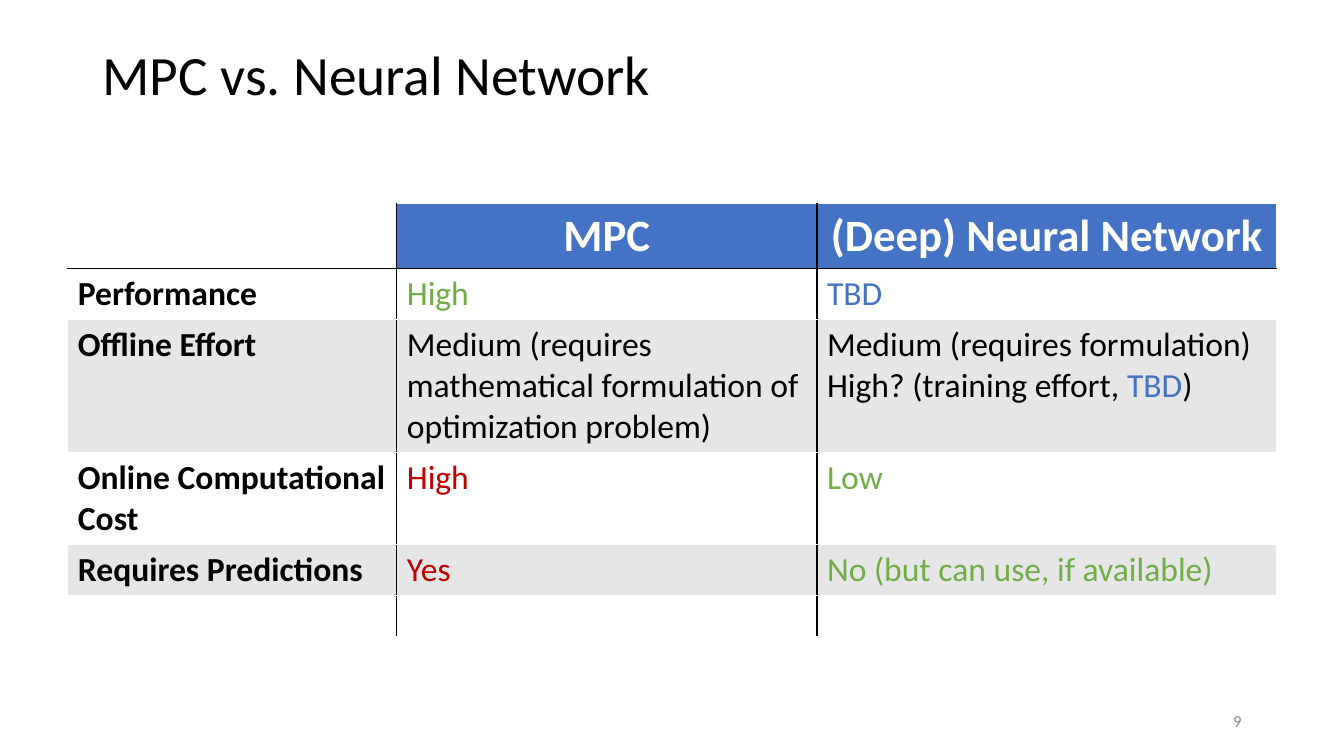
from lxml import etree
from pptx import Presentation
from pptx import util as u
from pptx.dml import color
from pptx.enum import text
from pptx.oxml import ns

COLORS = {
    "black": "000000", "white": "FFFFFF", "blue": "4472C4", "green": "70AD47",
    "red": "C00000", "band": "E7E6E6", "gray": "8C8C8C",
}
FONT = "Calibri"

# A cell is a list of paragraphs; a paragraph is a list of (words, color) runs
HEADINGS = ["", "MPC", "(Deep) Neural Network"]
CRITERIA = [
    ("Performance", [[("High", "green")]], [[("TBD", "blue")]]),
    ("Offline Effort",
     [[("Medium (requires mathematical formulation of optimization problem)", "black")]],
     [[("Medium (requires formulation)", "black")],
      [("High? (training effort, ", "black"), ("TBD", "blue"), (")", "black")]]),
    ("Online Computational Cost", [[("High", "red")]], [[("Low", "green")]]),
    ("Requires Predictions", [[("Yes", "red")]],
     [[("No (but can use, if available)", "green")]]),
    ("", [], []),
]
COLUMN_WIDTHS = [8.29, 10.59, 11.59]
ROW_HEIGHTS = [1.63, 1.29, 3.35, 2.32, 1.29, 1.03]


def rgb(name):
    return color.RGBColor.from_string(COLORS[name])


def write(frame, paragraphs, size, bold=False, align=text.PP_ALIGN.LEFT, spacing=None):
    for index, runs in enumerate(paragraphs):
        paragraph = frame.add_paragraph() if index else frame.paragraphs[0]
        paragraph.alignment = align
        if spacing:
            paragraph.line_spacing = spacing
        for words, tone in runs:
            run = paragraph.add_run()
            run.text = words
            run.font.name = FONT
            run.font.size = u.Pt(size)
            run.font.bold = bold
            run.font.color.rgb = rgb(tone)


def add_label(slide, left, top, width, height, words, tone, size, **style):
    label = slide.shapes.add_textbox(u.Cm(left), u.Cm(top), u.Cm(width), u.Cm(height))
    label.text_frame.word_wrap = True
    label.text_frame.vertical_anchor = text.MSO_ANCHOR.MIDDLE
    write(label.text_frame, [[(words, tone)]], size, **style)


def set_borders(cell, **sides):
    properties = cell._tc.get_or_add_tcPr()
    for side in "LRTB":
        line = etree.SubElement(properties, ns.qn(f"a:ln{side}"), w=str(u.Pt(1)))
        fill = etree.SubElement(line, ns.qn("a:solidFill"))
        etree.SubElement(fill, ns.qn("a:srgbClr"), val=COLORS[sides[side]])


def style_cell(cell, row, column):
    last = len(COLUMN_WIDTHS) - 1
    set_borders(
        cell,
        L="black" if column > 0 else "white",
        R="black" if column < last else "white",
        T="black" if row == 1 else "white",
        B="black" if row == 0 else "white",
    )
    if row == 0 and column > 0:
        background = "blue"
    else:
        background = "band" if row in (2, 4) else "white"
    cell.fill.solid()
    cell.fill.fore_color.rgb = rgb(background)


def add_comparison(slide, left, top):
    comparison = slide.shapes.add_table(
        len(ROW_HEIGHTS), len(COLUMN_WIDTHS), u.Cm(left), u.Cm(top),
        u.Cm(sum(COLUMN_WIDTHS)), u.Cm(sum(ROW_HEIGHTS))).table
    for column, width in zip(comparison.columns, COLUMN_WIDTHS):
        column.width = u.Cm(width)
    for row, height in enumerate(ROW_HEIGHTS):
        comparison.rows[row].height = u.Cm(height)
        for column in range(len(COLUMN_WIDTHS)):
            style_cell(comparison.cell(row, column), row, column)

    # Heading row
    for column, heading in enumerate(HEADINGS):
        if heading:
            write(comparison.cell(0, column).text_frame, [[(heading, "white")]], 32,
                  bold=True, align=text.PP_ALIGN.CENTER)

    # One row per criterion
    for row, (criterion, *ratings) in enumerate(CRITERIA, start=1):
        if criterion:
            write(comparison.cell(row, 0).text_frame, [[(criterion, "black")]], 24, bold=True)
        for column, rating in enumerate(ratings, start=1):
            write(comparison.cell(row, column).text_frame, rating, 24)


def main():
    deck = Presentation()
    deck.slide_width, deck.slide_height = u.Cm(33.87), u.Cm(19.05)
    slide = deck.slides.add_slide(deck.slide_layouts[6])

    # Title
    add_label(slide, 2.33, 1.01, 29.21, 1.88, "MPC vs. Neural Network", "black", 39.6,
              spacing=0.9)
    # Comparison table
    add_comparison(slide, 1.71, 5.13)
    # Slide number
    add_label(slide, 23.92, 17.66, 7.62, 1.01, "9", "gray", 12, align=text.PP_ALIGN.RIGHT)

    deck.save("out.pptx")


if __name__ == "__main__":
    main()
